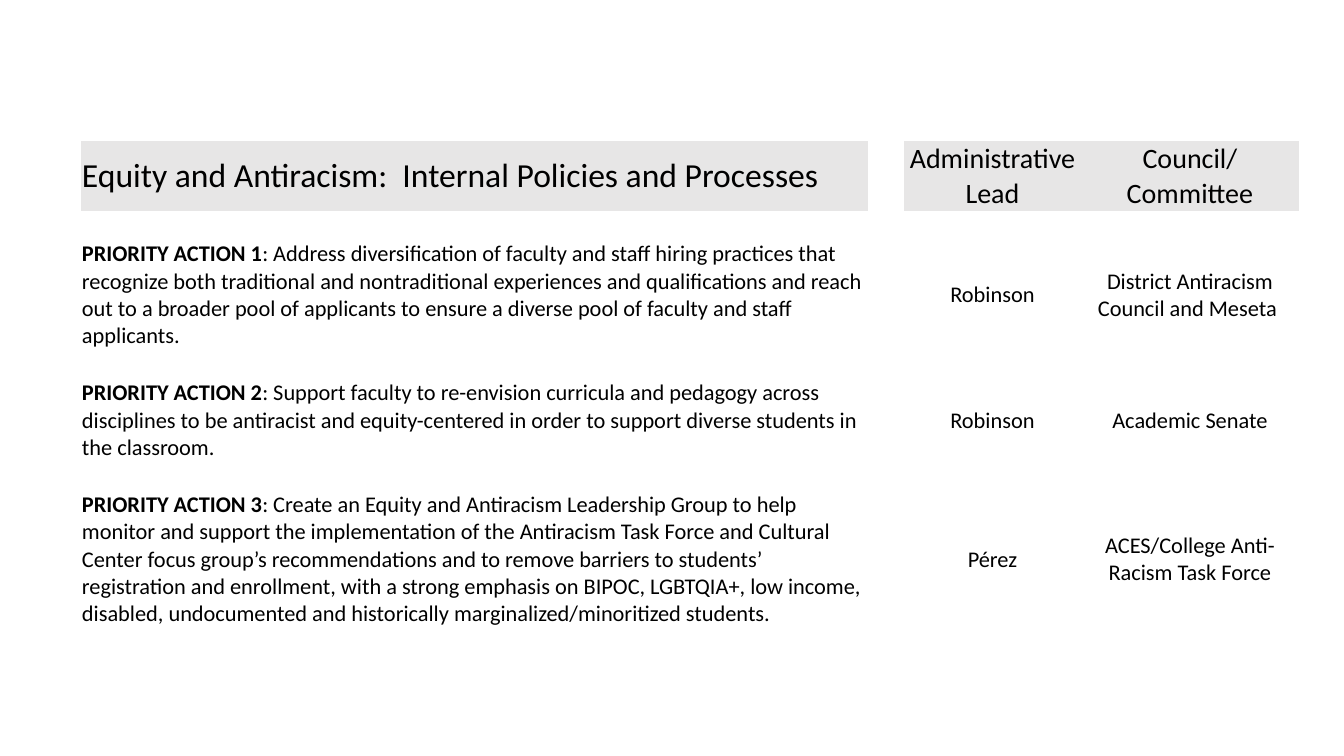
from dataclasses import dataclass

from lxml import etree
from pptx import Presentation
from pptx.dml.color import RGBColor
from pptx.enum.text import MSO_ANCHOR, PP_ALIGN
from pptx.oxml.ns import qn
from pptx.util import Emu, Pt

LEFT, CENTER = PP_ALIGN.LEFT, PP_ALIGN.CENTER
MIDDLE = MSO_ANCHOR.MIDDLE

EMU_PER_PX = 9071
FONT = "Calibri"
COLORS = {"text": "000000", "header": "E7E6E6"}
TITLE_SIZE, HEADING_SIZE, BODY_SIZE = 24, 20, 16
NO_STYLE_NO_GRID = "{2D5ABB26-0587-4C30-8999-92F81FD0307C}"

TABLE_LEFT, TABLE_TOP = 81, 141
COLUMN_WIDTHS = (787, 36, 177, 218)
ACTION_COLUMN, LEAD_COLUMN, COUNCIL_COLUMN = 0, 2, 3
HEADER_HEIGHT, SPACER_HEIGHT = 69, 28


@dataclass(frozen=True)
class PriorityAction:
    description: str
    lead: str
    council: str
    height: int


ACTIONS = (
    PriorityAction(
        "Address diversification of faculty and staff hiring practices that "
        "recognize both traditional and nontraditional experiences and "
        "qualifications and reach out to a broader pool of applicants to ensure "
        "a diverse pool of faculty and staff applicants.",
        "Robinson", "District Antiracism Council and Meseta ", 111),
    PriorityAction(
        "Support faculty to re-envision curricula and pedagogy across disciplines "
        "to be antiracist and equity-centered in order to support diverse "
        "students in the classroom.",
        "Robinson", "Academic Senate", 83),
    PriorityAction(
        "Create an Equity and Antiracism Leadership Group to help monitor and "
        "support the implementation of the Antiracism Task Force and Cultural "
        "Center focus group’s recommendations and to remove barriers to students’ "
        "registration and enrollment, with a strong emphasis on BIPOC, LGBTQIA+, "
        "low income, disabled, undocumented and historically "
        "marginalized/minoritized students.",
        "Pérez", "ACES/College Anti-Racism Task Force", 138),
)


def px(length: int) -> Emu:
    return Emu(length * EMU_PER_PX)


def prepare_cell(cell) -> None:
    """Clear the fill, tighten the margins and size the empty paragraph."""
    cell.fill.background()
    cell.vertical_anchor = MIDDLE
    cell.margin_left = cell.margin_right = cell.margin_top = px(1)
    cell.margin_bottom = 0
    para = cell.text_frame.paragraphs[0]
    etree.SubElement(para._p, qn("a:endParaRPr"), sz=str(BODY_SIZE * 100))


def write(cell, text: str, *, size: int = BODY_SIZE, bold: bool = False,
          align: PP_ALIGN = LEFT) -> None:
    """Append text to the cell's only paragraph."""
    para = cell.text_frame.paragraphs[0]
    para.alignment = align
    span = para.add_run()
    span.text = text
    span.font.name = FONT
    span.font.size = Pt(size)
    span.font.bold = bold
    span.font.color.rgb = RGBColor.from_string(COLORS["text"])


def add_plain_table(page, row_heights: list[int]):
    frame = page.shapes.add_table(
        len(row_heights), len(COLUMN_WIDTHS), px(TABLE_LEFT), px(TABLE_TOP),
        px(sum(COLUMN_WIDTHS)), px(sum(row_heights)))
    table = frame.table
    table.first_row = table.horz_banding = False
    table._tbl.tblPr.find(qn("a:tableStyleId")).text = NO_STYLE_NO_GRID
    for column, width in zip(table.columns, COLUMN_WIDTHS):
        column.width = px(width)
    for row, height in zip(table.rows, row_heights):
        row.height = px(height)
    for cell in table.iter_cells():
        prepare_cell(cell)
    return table


def fill_header(table) -> None:
    headings = (
        (ACTION_COLUMN, "Equity and Antiracism:  Internal Policies and Processes",
         TITLE_SIZE, LEFT),
        (LEAD_COLUMN, "Administrative Lead", HEADING_SIZE, CENTER),
        (COUNCIL_COLUMN, "Council/ Committee", HEADING_SIZE, CENTER),
    )
    for column, text, size, align in headings:
        cell = table.cell(0, column)
        cell.fill.solid()
        cell.fill.fore_color.rgb = RGBColor.from_string(COLORS["header"])
        write(cell, text, size=size, align=align)


def fill_action(table, number: int, action: PriorityAction) -> None:
    row = 2 * number
    action_cell = table.cell(row, ACTION_COLUMN)
    write(action_cell, f"PRIORITY ACTION {number}", bold=True)
    write(action_cell, f": {action.description}")
    write(table.cell(row, LEAD_COLUMN), action.lead, align=CENTER)
    write(table.cell(row, COUNCIL_COLUMN), action.council, align=CENTER)


def main() -> None:
    deck = Presentation()
    deck.slide_width, deck.slide_height = px(1344), px(756)
    page = deck.slides.add_slide(deck.slide_layouts[6])

    row_heights = [HEADER_HEIGHT]
    for action in ACTIONS:
        row_heights += [SPACER_HEIGHT, action.height]
    table = add_plain_table(page, row_heights)
    fill_header(table)
    for number, action in enumerate(ACTIONS, start=1):
        fill_action(table, number, action)

    deck.save("out.pptx")


if __name__ == "__main__":
    main()
